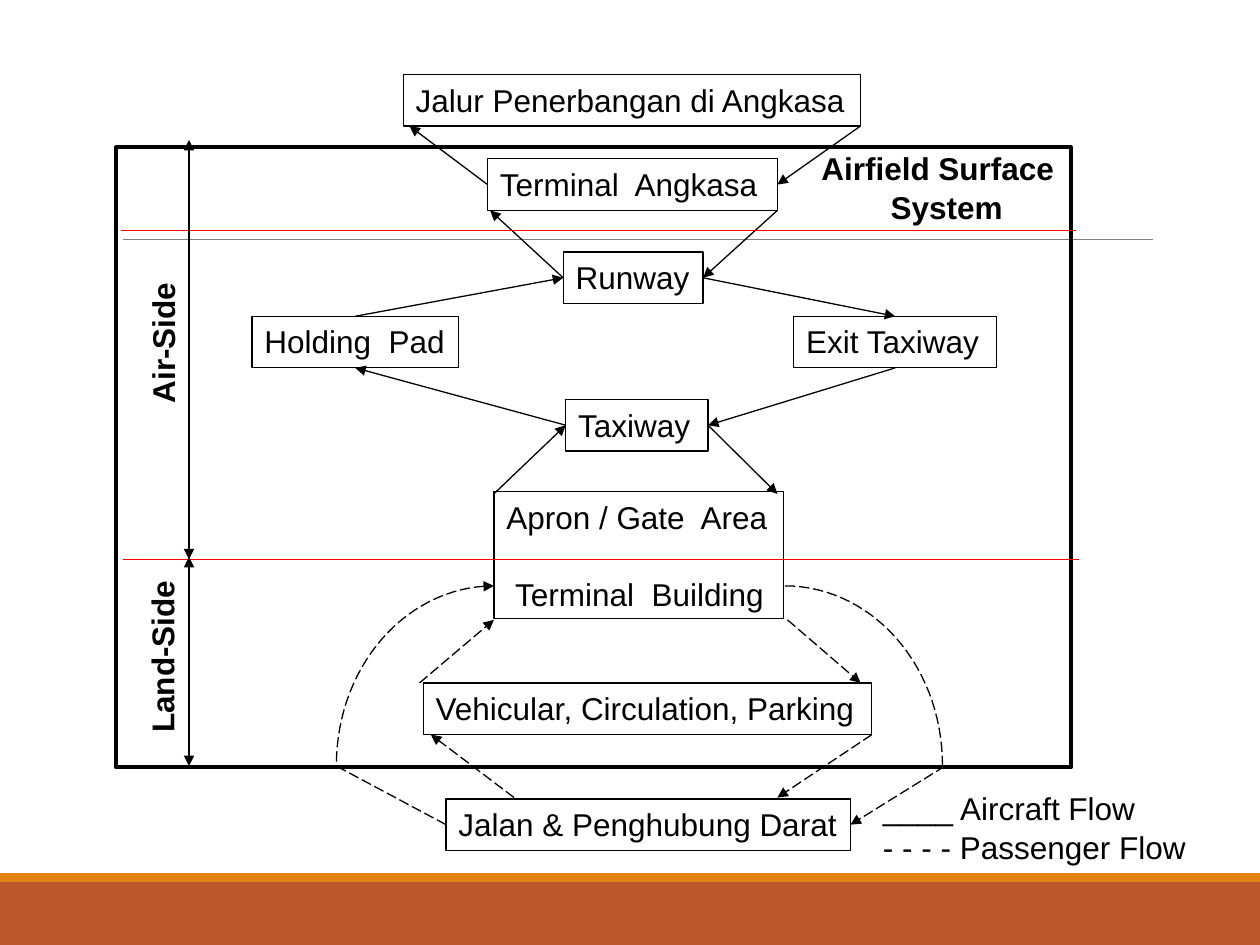
from dataclasses import dataclass
from math import cos, pi, sin

from lxml.etree import SubElement
from pptx import Presentation
from pptx.dml.color import RGBColor
from pptx.enum.dml import MSO_LINE
from pptx.enum.shapes import MSO_CONNECTOR, MSO_SHAPE
from pptx.enum.text import MSO_ANCHOR
from pptx.oxml.ns import qn
from pptx.util import Inches, Pt


@dataclass(frozen=True)
class Theme:
    ink: str = "000000"
    divider: str = "FF0000"
    rule: str = "808080"
    band: str = "BD582C"
    stripe: str = "E48312"
    font: str = "Arial"
    size: int = 18
    thin: float = 0.75
    hairline: float = 0.5
    thick: float = 2.25


@dataclass(frozen=True)
class Box:
    left: float
    top: float
    width: float
    height: float

    def at(self, x, y):
        return Inches(self.left + x), Inches(self.top + y)

    def inner(self, x, y, width, height):
        return Box(self.left + x, self.top + y, width, height)

    def lengths(self):
        return [Inches(v) for v in (self.left, self.top, self.width, self.height)]


THEME = Theme()
TOP, LEFT, BOTTOM, RIGHT = range(4)


# Shared drawing helpers
def style_line(shape, color=THEME.ink, width=THEME.thin, dashed=False, ends=()):
    line = shape.line
    line.color.rgb = RGBColor.from_string(color)
    line.width = Pt(width)
    if dashed:
        line.dash_style = MSO_LINE.LONG_DASH
    for end in ends:
        SubElement(shape._element.spPr.find(qn("a:ln")), qn(f"a:{end}End"), type="triangle")


def add_rect(page, box, fill=None, width=None):
    shape = page.shapes.add_shape(MSO_SHAPE.RECTANGLE, *box.lengths())
    shape.shadow.inherit = False
    if fill:
        shape.fill.solid()
        shape.fill.fore_color.rgb = RGBColor.from_string(fill)
    else:
        shape.fill.background()
    if width:
        style_line(shape, width=width)
    else:
        shape.line.fill.background()
    return shape


def write(shape, lines, bold=False, gap=1, indent=0):
    """Write lines; gap (points) and indent (inches) apply after the first."""
    frame = shape.text_frame
    frame.word_wrap = True
    frame.margin_right = 0
    frame.vertical_anchor = MSO_ANCHOR.TOP
    for index, text in enumerate(lines):
        para = frame.add_paragraph() if index else frame.paragraphs[0]
        properties = para._p.get_or_add_pPr()
        properties.set("algn", "l")
        if index:
            para.space_before = Pt(gap)
            properties.set("marL", str(Inches(indent)))
        span = para.add_run()
        span.text = text
        span.font.name = THEME.font
        span.font.size = Pt(THEME.size)
        span.font.bold = bold
        span.font.color.rgb = RGBColor.from_string(THEME.ink)


def add_label(page, box, lines, rotation=0, **text_style):
    label = page.shapes.add_textbox(*box.lengths())
    label.rotation = rotation
    write(label, lines, **text_style)


def add_line(page, box, start, end, nodes=None, **line_style):
    """Each end is an (x, y) point in the box or a (node name, side) pair."""
    def is_joint(spot):
        return isinstance(spot[0], str)

    corners = [box.at(0, 0) if is_joint(spot) else box.at(*spot) for spot in (start, end)]
    line = page.shapes.add_connector(MSO_CONNECTOR.STRAIGHT, *corners[0], *corners[1])
    for spot, join in ((start, line.begin_connect), (end, line.end_connect)):
        if is_joint(spot):
            join(nodes[spot[0]], spot[1])
    style_line(line, **line_style)
    SubElement(line._element.spPr, qn("a:effectLst"))


def add_quarter_arc(page, box, top, side, ends=(), steps=30):
    """Dashed quarter ellipse from its top point out to its side point."""
    reach, drop = side[0] - top[0], side[1] - top[1]
    angles = [pi / 2 * step / steps for step in range(steps + 1)]
    points = [box.at(top[0] + reach * sin(a), top[1] + drop * (1 - cos(a))) for a in angles]
    builder = page.shapes.build_freeform(*points[0])
    builder.add_line_segments(points[1:], close=False)
    arc = builder.convert_to_shape()
    arc.shadow.inherit = False
    arc.fill.background()
    style_line(arc, dashed=True, ends=ends)


# Bottom bands and the grey rule
def draw_backdrop(page, box):
    add_rect(page, box.inner(0, 7, box.width, 0.5), THEME.band)
    add_rect(page, box.inner(0, 6.93, box.width, 0.07), THEME.stripe)
    add_line(page, box, (0.98, 1.9), (9.15, 1.9), color=THEME.rule, width=THEME.hairline)


# Boxes and arrows of the aircraft and passenger flow
def draw_flow(page, box):
    nodes = {}
    for name, x, y, width, height, lines in (
        ("sky", 1.2, 0.09, 3.63, 0.41, ["Jalur Penerbangan di Angkasa"]),
        ("airspace", 1.87, 0.76, 2.3, 0.41, ["Terminal  Angkasa"]),
        ("runway", 2.47, 1.5, 1.11, 0.41, ["Runway"]),
        ("taxiway", 2.49, 2.67, 1.13, 0.41, ["Taxiway"]),
        ("exit", 4.3, 2.01, 1.61, 0.41, ["Exit Taxiway"]),
        ("holding", 0, 2.01, 1.64, 0.41, ["Holding  Pad"]),
        ("terminal", 1.92, 3.4, 2.3, 1.01, ["Apron / Gate  Area", "Terminal  Building"]),
        ("parking", 1.36, 4.92, 3.56, 0.41, ["Vehicular, Circulation, Parking"]),
        ("road", 1.54, 5.84, 3.21, 0.41, ["Jalan & Penghubung Darat"]),
    ):
        nodes[name] = add_rect(page, box.inner(x, y, width, height), width=THEME.thin)
        write(nodes[name], lines, gap=22.7, indent=0.07)

    aircraft = (
        ((4.83, 0.5), ("airspace", RIGHT)),
        ((4.17, 1.17), ("runway", RIGHT)),
        (("runway", RIGHT), ("exit", TOP)),
        (("exit", BOTTOM), ("taxiway", RIGHT)),
        (("taxiway", RIGHT), (4.17, 3.42)),
        ((1.92, 3.42), ("taxiway", LEFT)),
        (("taxiway", LEFT), ("holding", BOTTOM)),
        (("holding", TOP), ("runway", LEFT)),
        (("runway", LEFT), (1.89, 1.17)),
        (("airspace", LEFT), (1.25, 0.5)),
    )
    passengers = (
        ((4.25, 4.42), (4.83, 4.92)),
        ((1.33, 4.92), (1.92, 4.42)),
        ((2.08, 5.83), (1.42, 5.33)),
        ((4.92, 5.33), (4.17, 5.83)),
        ((5.5, 5.58), ("road", RIGHT)),
    )
    for arrows, dashed in ((aircraft, False), (passengers, True)):
        for start, end in arrows:
            add_line(page, box, start, end, nodes, dashed=dashed, ends=["tail"])

    # Direct way between road and terminal
    add_line(page, box, ("road", LEFT), (0.67, 5.58), nodes, dashed=True)
    add_quarter_arc(page, box, (1.92, 4.15), (0.67, 5.57), ends=["head"])
    add_quarter_arc(page, box, (4.23, 4.15), (5.48, 5.57))


# Heavy frame, dividers and side scales
def draw_airfield(page, box):
    add_rect(page, box, width=THEME.thick)
    for x, y in ((0.04, 0.66), (0.06, 3.27)):
        add_line(page, box, (x, y), (x + 7.58, y), color=THEME.divider)
    for top, bottom in ((-0.06, 3.27), (3.25, 4.91)):
        add_line(page, box, (0.58, top), (0.58, bottom), ends=["head", "tail"])
    add_label(page, box.inner(5.5, -0.04, 2.05, 0.7), ["Airfield Surface", "System"],
              bold=True, indent=0.55)
    add_label(page, box.inner(-0.21, 1.35, 1.16, 0.4), ["Air-Side"], 270, bold=True)
    add_label(page, box.inner(-0.34, 3.84, 1.41, 0.4), ["Land-Side"], 270, bold=True)


# Line legend
def draw_legend(page, box):
    add_label(page, box, ["____ Aircraft Flow", "- - - - Passenger Flow"])


def main():
    deck = Presentation()
    deck.slide_width, deck.slide_height = Inches(10), Inches(7.5)
    page = deck.slides.add_slide(deck.slide_layouts[6])
    draw_backdrop(page, Box(0, 0, 10, 7.5))
    draw_flow(page, Box(2, 0.5, 6, 6.25))
    draw_airfield(page, Box(0.92, 1.17, 7.58, 4.92))
    draw_legend(page, Box(6.91, 6.21, 2.6, 0.7))
    deck.save("out.pptx")


if __name__ == "__main__":
    main()
